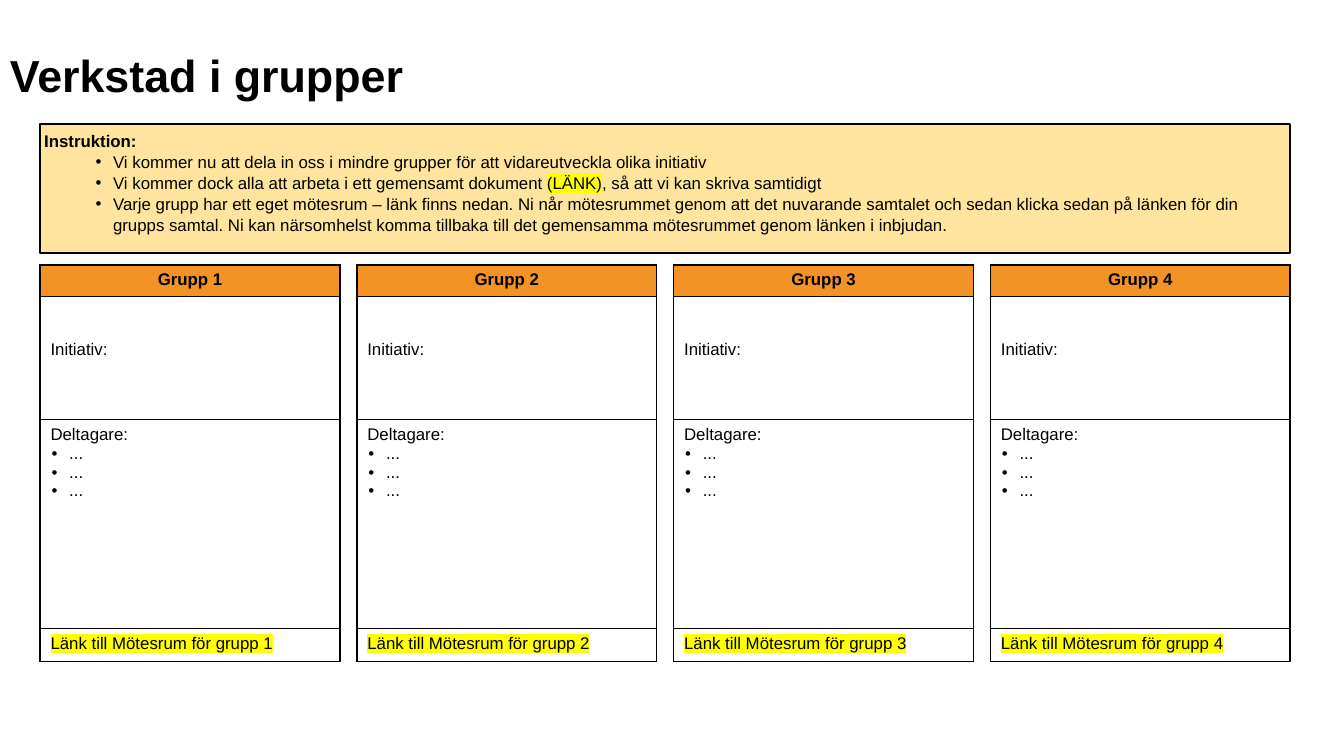
from lxml import etree
from pptx import Presentation
from pptx import util as u
from pptx.dml.color import RGBColor
from pptx.enum import shapes, text
from pptx.oxml.ns import qn

# Content: a paragraph is a list of (words, highlighted) spans
TITLE = "Verkstad i grupper"
HEADING = "Instruktion:"
INSTRUCTIONS = [
    [("Vi kommer nu att dela in oss i mindre grupper för att vidareutveckla olika initiativ", False)],
    [("Vi kommer dock alla att arbeta i ett gemensamt dokument ", False), ("(LÄNK)", True),
     (", så att vi kan skriva samtidigt", False)],
    [("Varje grupp har ett eget mötesrum – länk finns nedan. Ni når mötesrummet genom att det "
      "nuvarande samtalet och sedan klicka sedan på länken för din grupps samtal. Ni kan "
      "närsomhelst komma tillbaka till det gemensamma mötesrummet genom länken i inbjudan.", False)],
]
GROUPS = [1, 2, 3, 4]
PARTICIPANTS = ["..."] * 3

THEME = {
    "font": "Arial", "title": 24, "body": 9, "line": 1,
    "ink": "000000", "paper": "FFFFFF", "note": "FFE49D", "header": "F39325", "mark": "FFFF00",
}

# Layout in points
SLIDE = (720, 405)
TITLE_BOX = (0, 15.8, 669.6, 42.5)
NOTE_BOX = (21.5, 66.4, 669.6, 69.1)
TABLE_TOP, TABLE_WIDTH, TABLE_GAP = 142, 160.6, 9.1
ROWS = [15.5, 66, 112, 17.7]
INITIATIVE_TOP = 23.5


def colour(name):
    return RGBColor.from_string(THEME[name])


def points(values):
    return [u.Pt(value) for value in values]


def set_margins(owner, side, top=3):
    owner.margin_left = owner.margin_right = u.Pt(side)
    owner.margin_top, owner.margin_bottom = u.Pt(top), u.Pt(3)


def write(frame, spans, size="body", bold=False, bullet=None, align=text.PP_ALIGN.LEFT, spacing=None):
    """Add a paragraph; bullet is (left margin, hanging indent)."""
    first = frame.paragraphs[0]
    para = frame.add_paragraph() if first.runs else first
    para.alignment = align
    if spacing:
        para.line_spacing = spacing
    if bullet:
        props = para._p.get_or_add_pPr()
        props.set("marL", str(u.Pt(bullet[0])))
        props.set("indent", str(-u.Pt(bullet[1])))
        etree.SubElement(props, qn("a:buFont"), typeface=THEME["font"])
        etree.SubElement(props, qn("a:buChar"), char="•")
    font = para.font
    font.name, font.size, font.bold = THEME["font"], u.Pt(THEME[size]), bold
    font.color.rgb = colour("ink")
    for words, marked in spans:
        span = para.add_run()
        span.text = words
        if marked:
            highlight = etree.SubElement(span._r.get_or_add_rPr(), qn("a:highlight"))
            etree.SubElement(highlight, qn("a:srgbClr"), val=THEME["mark"])


def style_cell(cell, fill, top=3):
    set_margins(cell, 5.6, top)
    props = cell._tc.get_or_add_tcPr()
    for side in ("lnL", "lnR", "lnT", "lnB"):
        border = etree.SubElement(props, qn("a:" + side), w=str(u.Pt(THEME["line"])))
        paint = etree.SubElement(border, qn("a:solidFill"))
        etree.SubElement(paint, qn("a:srgbClr"), val=THEME["ink"])
    cell.fill.solid()
    cell.fill.fore_color.rgb = colour(fill)


def add_group(page, number, left):
    table = page.shapes.add_table(
        len(ROWS), 1, *points((left, TABLE_TOP, TABLE_WIDTH, sum(ROWS)))).table
    table.first_row = table.horz_banding = False
    for row, height in zip(table.rows, ROWS):
        row.height = u.Pt(height)
    header, initiative, members, link = [row.cells[0] for row in table.rows]
    style_cell(header, "header")
    style_cell(initiative, "paper", INITIATIVE_TOP)
    style_cell(members, "paper")
    style_cell(link, "paper")

    write(header.text_frame, [(f"Grupp {number}", False)], bold=True, align=text.PP_ALIGN.CENTER)
    write(initiative.text_frame, [("Initiativ:", False)])
    write(members.text_frame, [("Deltagare:", False)])
    for name in PARTICIPANTS:
        write(members.text_frame, [(name, False)], bullet=(10, 9.4))
    write(link.text_frame, [(f"Länk till Mötesrum för grupp {number}", True)])


def main():
    deck = Presentation()
    deck.slide_width, deck.slide_height = points(SLIDE)
    page = deck.slides.add_slide(deck.slide_layouts[6])

    # Title
    frame = page.shapes.add_textbox(*points(TITLE_BOX)).text_frame
    frame.word_wrap = True
    frame.vertical_anchor = text.MSO_ANCHOR.BOTTOM
    set_margins(frame, 5.3)
    write(frame, [(TITLE, False)], size="title", bold=True, spacing=0.95)

    # Instructions
    box = page.shapes.add_shape(shapes.MSO_SHAPE.RECTANGLE, *points(NOTE_BOX))
    box.shadow.inherit = False
    box.fill.solid()
    box.fill.fore_color.rgb = colour("note")
    box.line.color.rgb = colour("ink")
    box.line.width = u.Pt(THEME["line"])
    frame = box.text_frame
    frame.word_wrap = True
    frame.vertical_anchor = text.MSO_ANCHOR.TOP
    set_margins(frame, 2.2)
    write(frame, [(HEADING, False)], bold=True, spacing=1.04)
    for spans in INSTRUCTIONS:
        write(frame, spans, bullet=(36.9, 9.4), spacing=1.04)

    # One table per group
    for index, number in enumerate(GROUPS):
        add_group(page, number, NOTE_BOX[0] + index * (TABLE_WIDTH + TABLE_GAP))

    deck.save("out.pptx")


if __name__ == "__main__":
    main()
